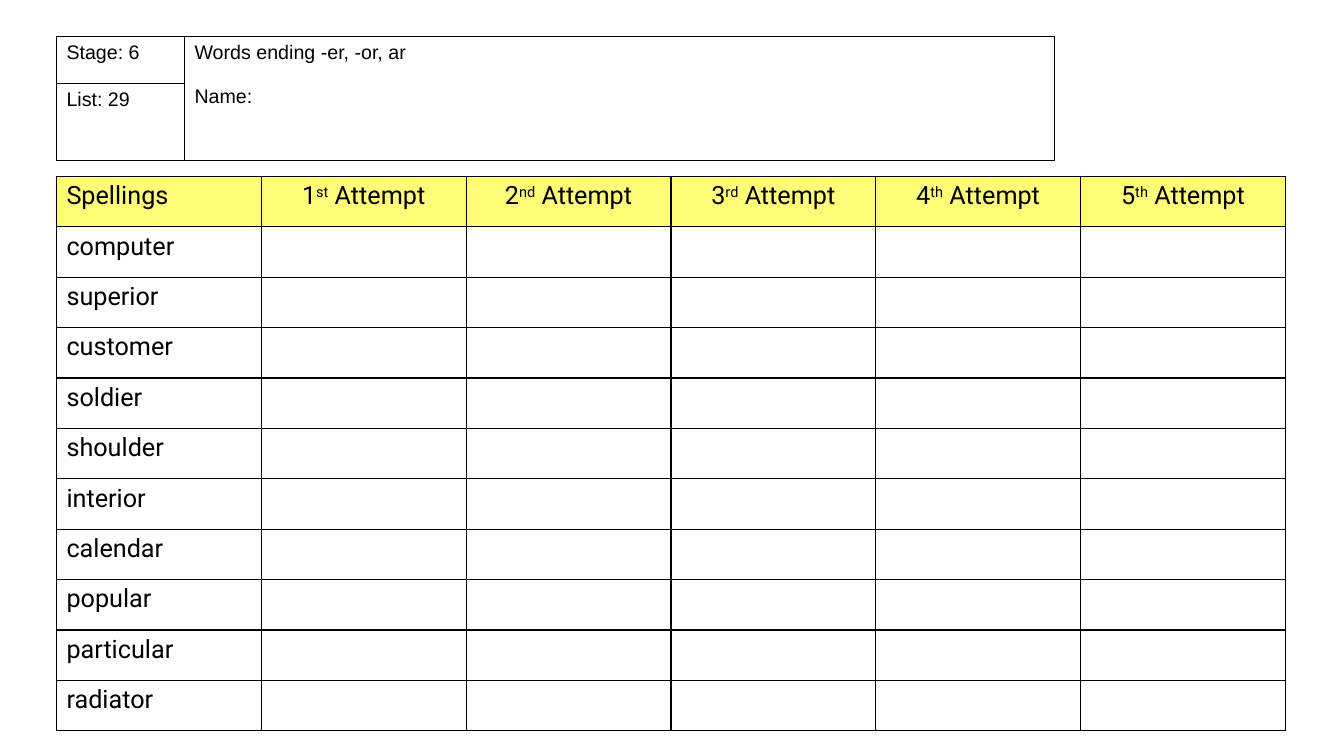
import pptx
import pptx.util
import pptx.dml.color
import pptx.enum.text
import pptx.oxml
import pptx.oxml.ns

COLORS = {"ink": "000000", "header": "FFFD78"}
TITLE_FONT = {"name": "Arial", "size": pptx.util.Pt(14)}
WORD_FONT = {"name": "Roboto", "size": pptx.util.Pt(18)}
ORDINALS = ["st", "nd", "rd", "th", "th"]
WORDS = ["computer", "superior", "customer", "soldier", "shoulder",
         "interior", "calendar", "popular", "particular", "radiator"]
LEFT = 0.56


def rgb(name):
    return pptx.dml.color.RGBColor.from_string(COLORS[name])


def add_run(p, text, font, raised=False):
    r = p.add_run()
    r.text = text
    for key, value in font.items():
        setattr(r.font, key, value)
    r.font.color.rgb = rgb("ink")
    if raised:
        r._r.get_or_add_rPr().set("baseline", "30000")


def style_cell(cell, fill=None):
    tc_pr = cell._tc.get_or_add_tcPr()
    for side in "LRTB":
        tc_pr.append(pptx.oxml.parse_xml(
            f'<a:ln{side} {pptx.oxml.ns.nsdecls("a")} w="12700"><a:solidFill>'
            f'<a:srgbClr val="{COLORS["ink"]}"/></a:solidFill></a:ln{side}>'))
    if fill:
        cell.fill.solid()
        cell.fill.fore_color.rgb = rgb(fill)
    else:
        cell.fill.background()


def add_grid(slide, left, top, widths, heights, header=None):
    """Place a plain ruled table whose first row may be filled."""
    box = [pptx.util.Inches(v) for v in (left, top, sum(widths), sum(heights))]
    table = slide.shapes.add_table(len(heights), len(widths), *box).table
    table.first_row = table.horz_banding = False
    for col, width in zip(table.columns, widths):
        col.width = pptx.util.Inches(width)
    for i, height in enumerate(heights):
        table.rows[i].height = pptx.util.Inches(height)
        for cell in table.rows[i].cells:
            style_cell(cell, header if i == 0 else None)
    return table


def add_title_block(slide, left, top):
    table = add_grid(slide, left, top, [1.27, 8.63], [0.47, 0.76])
    table.cell(0, 1).merge(table.cell(1, 1))
    for i, text in enumerate(["Stage: 6", "List: 29"]):
        add_run(table.cell(i, 0).text_frame.paragraphs[0], text, TITLE_FONT)
    tf = table.cell(0, 1).text_frame
    add_run(tf.paragraphs[0], "Words ending -er, -or, ar", TITLE_FONT)
    p = tf.add_paragraph()
    p.space_before = pptx.util.Pt(16)
    add_run(p, "Name:", TITLE_FONT)


def add_spelling_grid(slide, left, top, width, height):
    cols, rows = len(ORDINALS) + 1, len(WORDS) + 1
    table = add_grid(slide, left, top, [width / cols] * cols,
                     [height / rows] * rows, "header")
    # Word column
    for i, word in enumerate(["Spellings"] + WORDS):
        add_run(table.cell(i, 0).text_frame.paragraphs[0], word, WORD_FONT)
    # Attempt headings
    for n, suffix in enumerate(ORDINALS, 1):
        p = table.cell(0, n).text_frame.paragraphs[0]
        p.alignment = pptx.enum.text.PP_ALIGN.CENTER
        add_run(p, str(n), WORD_FONT)
        add_run(p, suffix, WORD_FONT, raised=True)
        add_run(p, " Attempt", WORD_FONT)


def main():
    prs = pptx.Presentation()
    prs.slide_width = pptx.util.Inches(13.33)
    prs.slide_height = pptx.util.Inches(7.5)
    slide = prs.slides.add_slide(prs.slide_layouts[6])
    add_spelling_grid(slide, LEFT, 1.75, 12.19, 5.5)
    add_title_block(slide, LEFT, 0.36)
    prs.save("out.pptx")


if __name__ == "__main__":
    main()
